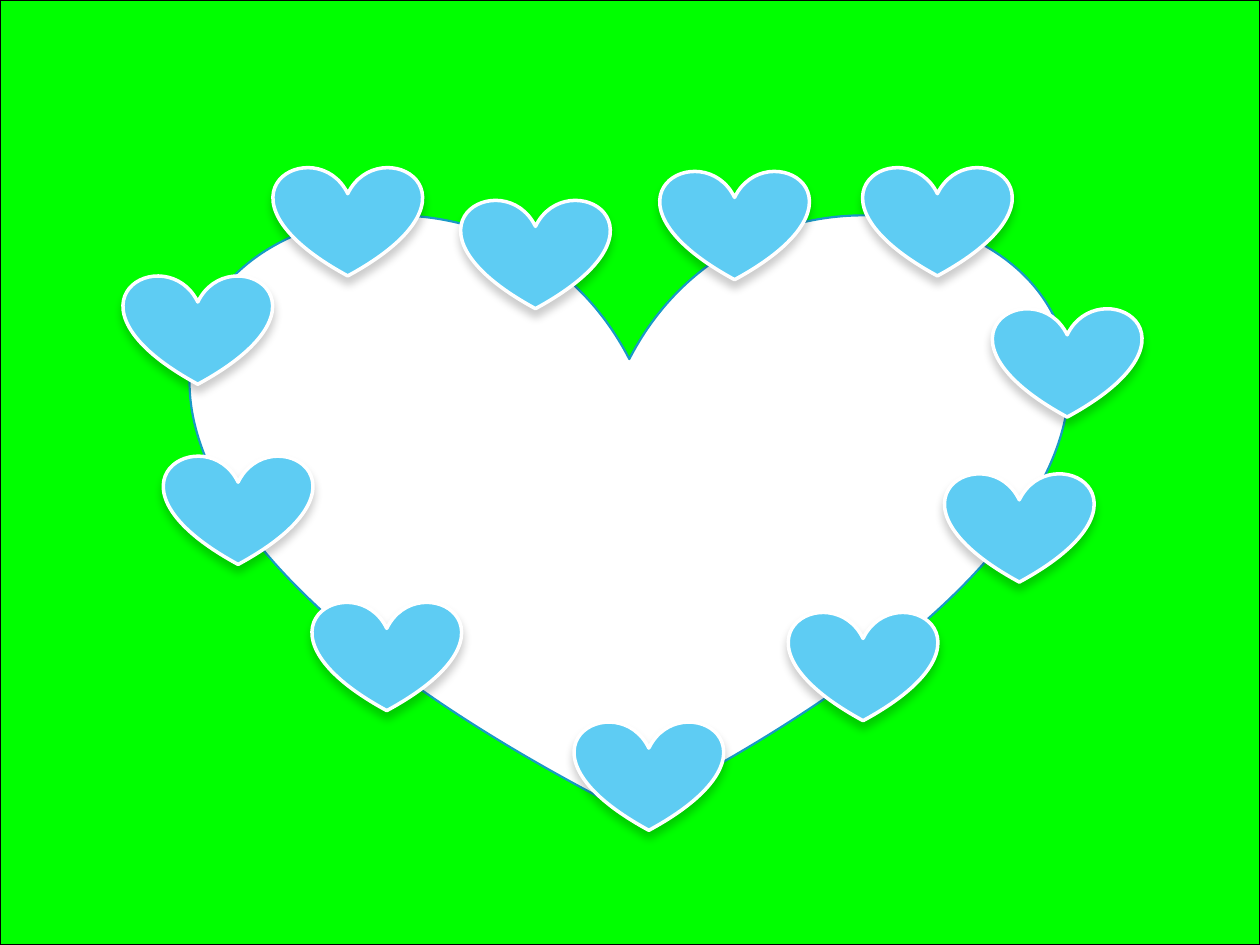
from lxml.etree import SubElement
from pptx import Presentation
from pptx.dml.color import RGBColor
from pptx.enum.shapes import MSO_SHAPE as SHAPE
from pptx.oxml.ns import qn
from pptx.util import Inches, Pt

GREEN = RGBColor(0x00, 0xFF, 0x00)
BLACK = RGBColor(0x00, 0x00, 0x00)
WHITE = RGBColor(0xFF, 0xFF, 0xFF)
BLUE = RGBColor(0x19, 0x99, 0xC6)
SKY = RGBColor(0x5E, 0xCC, 0xF3)

HEART_SIZE = (1.18, 0.87)
HEART_PLACES = [
    (2.48, 4.77), (1.3, 3.61), (0.98, 2.18), (2.17, 1.32),
    (3.66, 1.58), (4.56, 5.72), (6.26, 4.85), (7.5, 3.75),
    (7.88, 2.44), (6.85, 1.32), (5.24, 1.35),
]


def add_figure(slide, preset, box, fill, line, weight):
    figure = slide.shapes.add_shape(preset, *[Inches(v) for v in box])
    figure.shadow.inherit = False
    figure.fill.solid()
    figure.fill.fore_color.rgb = fill
    figure.line.color.rgb = line
    figure.line.width = Pt(weight)
    return figure


def add_soft_shadow(figure):
    effects = figure._element.spPr.find(qn("a:effectLst"))
    settings = {"blurRad": Pt(5), "dist": Pt(4), "dir": 90 * 60000,
                "algn": "tl", "rotWithShape": 0}
    shadow = SubElement(effects, qn("a:outerShdw"))
    for key, value in settings.items():
        shadow.set(key, str(value))
    color = SubElement(shadow, qn("a:srgbClr"), val=str(BLACK))
    SubElement(color, qn("a:alpha"), val="20000")


prs = Presentation()
prs.slide_width = Inches(10)
prs.slide_height = Inches(7.5)
slide = prs.slides.add_slide(prs.slide_layouts[6])

add_figure(slide, SHAPE.RECTANGLE, (0, 0, 10, 7.5), GREEN, BLACK, 0.75)
add_figure(slide, SHAPE.HEART, (1.53, 1.65, 6.93, 4.8), WHITE, BLUE, 1.25)

for place in HEART_PLACES:
    small_heart = add_figure(slide, SHAPE.HEART, place + HEART_SIZE, SKY, WHITE, 2)
    add_soft_shadow(small_heart)

prs.save("out.pptx")
